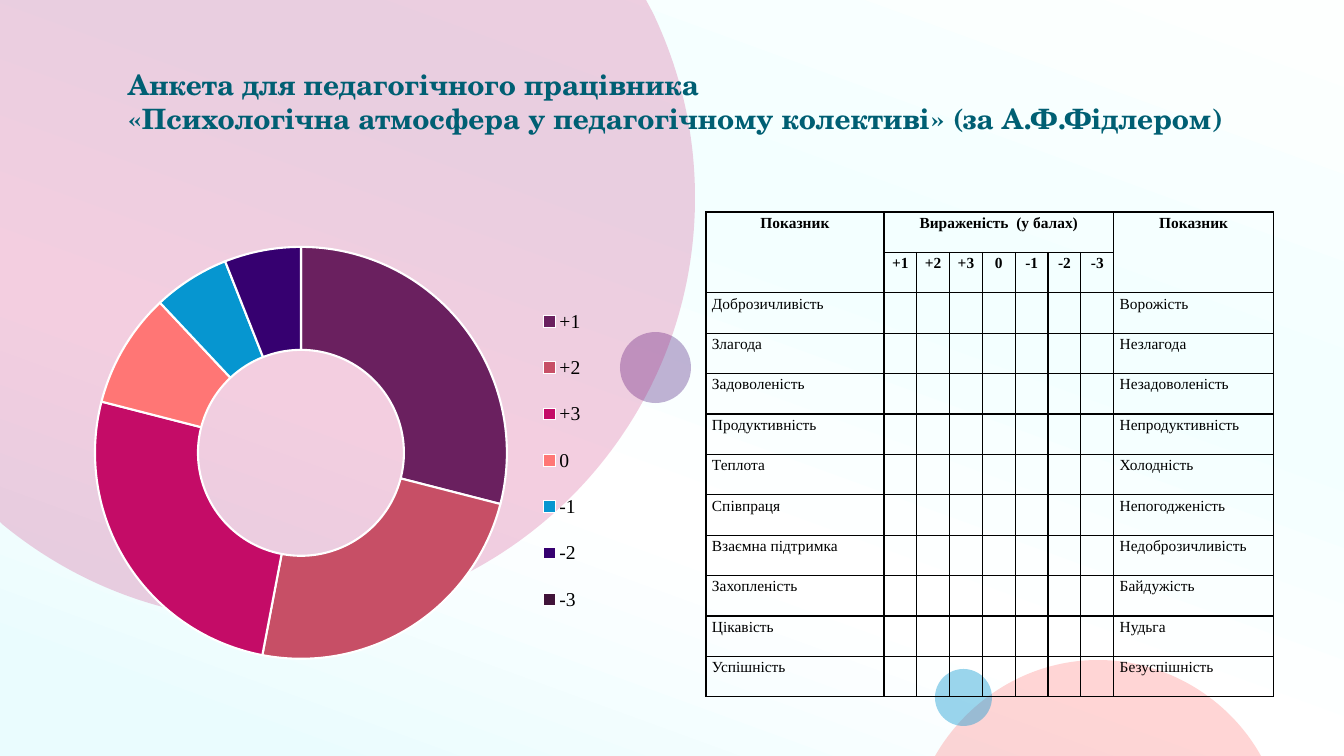
"""Build the slide with the staff mood survey: a doughnut chart and a score table."""
from dataclasses import dataclass

from lxml import etree
from pptx import Presentation
from pptx.chart.data import CategoryChartData
from pptx.dml.color import RGBColor
from pptx.enum.chart import XL_CHART_TYPE, XL_LEGEND_POSITION
from pptx.enum.shapes import MSO_SHAPE
from pptx.enum.text import MSO_ANCHOR, MSO_AUTO_SIZE, PP_ALIGN
from pptx.oxml.ns import qn
from pptx.shapes.base import BaseShape
from pptx.slide import Slide
from pptx.table import _Cell
from pptx.text.text import TextFrame
from pptx.util import Emu, Pt

OVAL = MSO_SHAPE.OVAL
RING = XL_CHART_TYPE.DOUGHNUT
RIGHT = XL_LEGEND_POSITION.RIGHT
TOP = MSO_ANCHOR.TOP
FIXED = MSO_AUTO_SIZE.NONE
LEFT, MID, FULL = PP_ALIGN.LEFT, PP_ALIGN.CENTER, PP_ALIGN.JUSTIFY

WIDE, HIGH = 1344, 756
SCALE = 12192000 / WIDE
CHART = (534, 456)
SERIF = "Times New Roman"
HEAD = "TeX Gyre Schola"
BASE = "Cabin"

HUES = {
    "ink": "000000", "white": "FFFFFF", "teal": "005F73", "plum": "6A205F",
    "rose": "C74F66", "pink": "C40C67", "coral": "FF7675", "blue": "0696D0",
    "navy": "360070", "wine": "401339",
}
FADE = [(8, "EAFCFE"), (38, "FFFFFF"), (65, "F3FFFF"), (100, "FDFFFE")]

SCORES = ["+1", "+2", "+3", "0", "-1", "-2", "-3"]
SHARES = [29, 24, 26, 9, 6, 6, 0]
PARTS = ["plum", "rose", "pink", "coral", "blue", "navy", "wine"]
PAIRS = [
    ("Доброзичливість", "Ворожість"),
    ("Злагода", "Незлагода"),
    ("Задоволеність", "Незадоволеність"),
    ("Продуктивність", "Непродуктивність"),
    ("Теплота", "Холодність"),
    ("Співпраця", "Непогодженість"),
    ("Взаємна підтримка", "Недоброзичливість"),
    ("Захопленість", "Байдужість"),
    ("Цікавість", "Нудьга"),
    ("Успішність", "Безуспішність"),
]


@dataclass
class Disc:
    """A whole circle inside the slide."""
    left: int
    top: int
    size: int
    hue: str
    alpha: int


@dataclass
class Arc:
    """A circle cut by the slide's edges: three bend points to a curve, then corners."""
    start: tuple[int, int]
    bends: list[tuple[int, int]]
    corners: list[tuple[int, int]]
    hue: str
    alpha: int


BACK = [
    Disc(620, 332, 71, "navy", 30),
    Arc((935, 756), [(967, 700), (1028, 660), (1098, 660),
                     (1168, 660), (1230, 700), (1261, 756)], [], "coral", 30),
    Disc(935, 669, 57, "blue", 40),
    Arc((653, 13), [(680, 70), (695, 131), (695, 198),
                    (695, 431), (506, 621), (271, 621),
                    (169, 621), (76, 585), (2, 524)], [(0, 522), (0, 0), (646, 0)], "pink", 20),
]


def px(count: float) -> Emu:
    """Turn px into EMU."""
    return Emu(round(count * SCALE))


def rgb(hue: str) -> RGBColor:
    """Look up a named colour."""
    return RGBColor.from_string(HUES[hue])


def write(frame: TextFrame, *lines: str, size: int = 11, font: str = SERIF, hue: str = "ink",
          bold: bool = False, align: PP_ALIGN = LEFT, space: float = 1.15) -> None:
    """Fill a text frame with one paragraph, broken into the given lines."""
    para = frame.paragraphs[0]
    para.alignment, para.line_spacing = align, space
    para.space_before = para.space_after = Pt(0)
    for index, line in enumerate(lines):
        if index:
            para.add_line_break()
        run = para.add_run()
        run.text = line
        run.font.size, run.font.name, run.font.bold = Pt(size), font, bold
        run.font.color.rgb = rgb(hue)


def tint(shape: BaseShape, hue: str, alpha: int) -> None:
    """Give a shape a see-through fill and no line or shadow."""
    shape.shadow.inherit = False
    shape.fill.solid()
    shape.fill.fore_color.rgb = rgb(hue)
    shape.line.fill.background()
    color = shape._element.spPr.find(f"{qn('a:solidFill')}/{qn('a:srgbClr')}")
    etree.SubElement(color, qn("a:alpha"), val=str(alpha * 1000))


def draw_disc(slide: Slide, disc: Disc) -> BaseShape:
    """Draw a whole circle."""
    size = px(disc.size)
    return slide.shapes.add_shape(OVAL, px(disc.left), px(disc.top), size, size)


def draw_arc(slide: Slide, arc: Arc) -> BaseShape:
    """Draw a cut circle, joining every three bend points into one curve."""
    pen = slide.shapes.build_freeform(*map(px, arc.start))
    pen.add_line_segments([(px(x), px(y)) for x, y in arc.bends + arc.corners], close=True)
    shape = pen.convert_to_shape()
    steps = list(shape._element.iter(qn("a:lnTo")))[:len(arc.bends)]
    for first in range(0, len(steps), 3):
        curve = etree.Element(qn("a:cubicBezTo"))
        steps[first].addprevious(curve)
        for step in steps[first:first + 3]:
            curve.append(step[0])
            step.getparent().remove(step)
    return shape


def draw_back(slide: Slide) -> None:
    """Paint the background fade and the circles on it."""
    fill = slide.background.fill
    fill.gradient()
    fill.gradient_angle = 70
    stops = next(slide._element.iter(qn("a:gsLst")))
    for stop in list(stops):
        stops.remove(stop)
    for place, color in FADE:
        stop = etree.SubElement(stops, qn("a:gs"), pos=str(place * 1000))
        etree.SubElement(stop, qn("a:srgbClr"), val=color)
    for item in BACK:
        draw = draw_disc if isinstance(item, Disc) else draw_arc
        tint(draw(slide, item), item.hue, item.alpha)


def draw_title(slide: Slide) -> None:
    """Set the title over the circles."""
    title = slide.shapes.title
    slide.shapes._spTree.append(title._element)
    title.left, title.top, title.width, title.height = px(57), px(62), px(1236), px(110)
    frame = title.text_frame
    frame.word_wrap, frame.auto_size, frame.vertical_anchor = True, FIXED, TOP
    frame.margin_left, frame.margin_top, frame.margin_right = px(71), px(6), 0
    write(frame, "Анкета для педагогічного працівника",
          "«Психологічна атмосфера у педагогічному колективі» (за А.Ф.Фідлером)",
          size=20, font=HEAD, hue="teal", bold=True, space=1.0)


def frame_cell(cell: _Cell) -> None:
    """Clear a cell's fill and give it thin borders and insets."""
    cell.margin_left = cell.margin_right = px(6)
    cell.margin_top = cell.margin_bottom = 0
    props = cell._tc.get_or_add_tcPr()
    for side in ("lnL", "lnR", "lnT", "lnB"):
        line = etree.SubElement(props, qn(f"a:{side}"), w=str(Pt(1)))
        fill = etree.SubElement(line, qn("a:solidFill"))
        etree.SubElement(fill, qn("a:srgbClr"), val=HUES["ink"])
    cell.fill.background()


def draw_table(slide: Slide) -> None:
    """Draw the score table."""
    count, last = len(PAIRS) + 2, len(SCORES) + 1
    table = slide.shapes.add_table(count, last + 1, px(706), px(212), px(568), px(485)).table
    table.first_row = table.horz_banding = False
    widths = [178] + [230 / len(SCORES)] * len(SCORES) + [160]
    for column, width in zip(table.columns, widths):
        column.width = px(width)
    for row in table.rows:
        row.height = px(485 / count)
    for cell in table.iter_cells():
        frame_cell(cell)
    for index in (0, last):
        table.cell(0, index).merge(table.cell(1, index))
        write(table.cell(0, index).text_frame, "Показник", bold=True, align=MID)
    table.cell(0, 1).merge(table.cell(0, last - 1))
    write(table.cell(0, 1).text_frame, "Вираженість  (у балах)", bold=True, align=MID)
    for index, score in enumerate(SCORES, 1):
        write(table.cell(1, index).text_frame, score, bold=True, align=MID)
    for index, (good, bad) in enumerate(PAIRS, 2):
        write(table.cell(index, 0).text_frame, good, align=FULL)
        write(table.cell(index, last).text_frame, bad)


def place(part: etree._Element, index: int, inner: bool, *box: int) -> None:
    """Fix the px box of a chart part within the chart."""
    for old in part.findall(qn("c:layout")):
        part.remove(old)
    layout = etree.Element(qn("c:layout"))
    part.insert(index, layout)
    manual = etree.SubElement(layout, qn("c:manualLayout"))
    if inner:
        etree.SubElement(manual, qn("c:layoutTarget"), val="inner")
    for mode in ("xMode", "yMode"):
        etree.SubElement(manual, qn(f"c:{mode}"), val="edge")
    for key, length, whole in zip("xywh", box, CHART * 2):
        etree.SubElement(manual, qn(f"c:{key}"), val=str(length / whole))


def draw_chart(slide: Slide) -> None:
    """Draw the doughnut of score shares."""
    data = CategoryChartData()
    data.categories = SCORES
    data.add_series("Series 1", SHARES)
    chart = slide.shapes.add_chart(RING, px(71), px(214), *map(px, CHART), data).chart
    chart.has_title = False
    chart.font.size, chart.font.name = Pt(10), BASE
    chart.font.color.rgb = rgb("ink")
    plot = chart.plots[0]
    plot.vary_by_categories = True
    for index, hue in enumerate(PARTS):
        form = plot.series[0].points[index].format
        form.fill.solid()
        form.fill.fore_color.rgb = rgb(hue)
        form.line.color.rgb = rgb("white")
        form.line.width = Pt(1.5)
    chart.has_legend = True
    legend = chart.legend
    legend.position, legend.include_in_layout = RIGHT, False
    legend.font.size, legend.font.name = Pt(14), SERIF
    legend.font.color.rgb = rgb("ink")
    place(next(chart._chartSpace.iter(qn("c:plotArea"))), 0, True, 24, 33, 412, 412)
    place(legend._element, 1, False, 459, 72, 64, 349)


def main() -> None:
    """Build and save the slide."""
    deck = Presentation()
    deck.slide_width, deck.slide_height = px(WIDE), px(HIGH)
    slide = deck.slides.add_slide(deck.slide_layouts[5])
    draw_back(slide)
    draw_title(slide)
    draw_table(slide)
    draw_chart(slide)
    deck.save("out.pptx")


if __name__ == "__main__":
    main()
